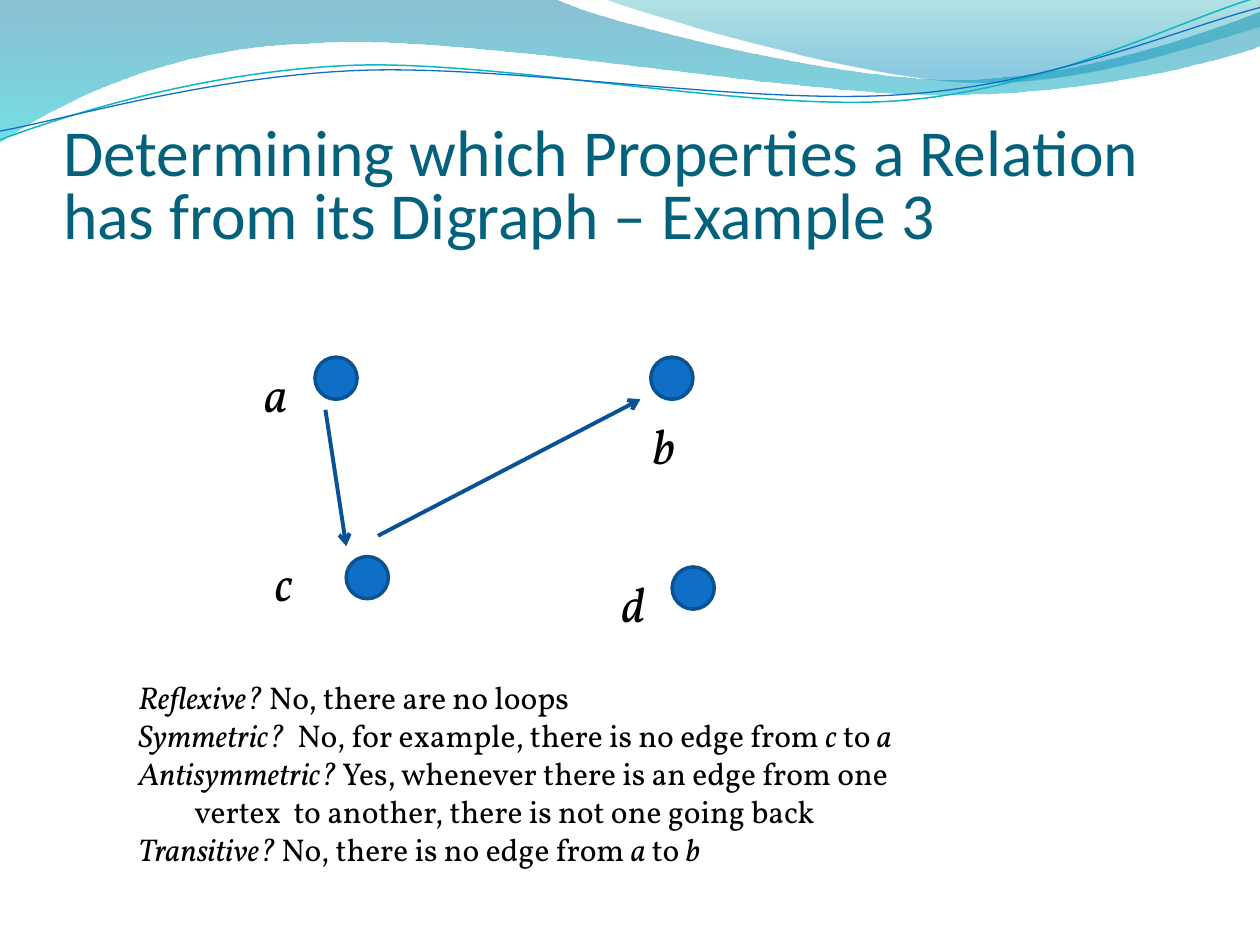
from lxml.etree import SubElement
from pptx import Presentation
from pptx.dml.color import RGBColor
from pptx.enum.shapes import MSO_CONNECTOR as LINK, MSO_SHAPE as SHAPE
from pptx.enum.text import MSO_ANCHOR as ANCHOR, MSO_AUTO_SIZE as FIT, PP_ALIGN as ALIGN
from pptx.oxml.ns import qn
from pptx.util import Cm, Pt

TITLE = RGBColor(0x04, 0x61, 0x7B)
BLACK = RGBColor(0, 0, 0)
BLUE = RGBColor(0x0F, 0x6F, 0xC6)
RIM = RGBColor(0x0B, 0x52, 0x92)
EDGE = RGBColor(0x09, 0x52, 0x95)
TEAL = RGBColor(0x0A, 0xB8, 0xBF)
DEEP = RGBColor(0x00, 0x74, 0xA1)
AQUA = RGBColor(0x00, 0xC6, 0xCF)
MINT = RGBColor(0x00, 0xA1, 0xA9)
SKY = RGBColor(0x00, 0x8B, 0xBF)
FONT = "Vollkorn"

# Wave points, in thousandths of the slide width: a straight step holds
# one point, a curve holds two controls and an end.
BAND = [[(0, 0)], [(440, -1)],
        [(476, 17), (664, 63), (758, 63)], [(853, 63), (958, 26), (1000, 9)],
        [(1001, 36)],
        [(983, 44), (870, 76), (746, 75)], [(622, 75), (382, 28), (257, 34)],
        [(129, 36), (46, 83), (-1, 113)]]
CREST = [[(479, -1)],
         [(509, 11), (682, 62), (769, 65)], [(856, 69), (961, 32), (1000, 21)],
         [(1000, 0)]]
UPPER = [[(0, 111)],
         [(48, 93), (158, 57), (277, 52)], [(395, 47), (593, 89), (713, 80)],
         [(833, 71), (938, 15), (998, -2)]]
LOWER = [[(0, 104)],
         [(47, 96), (164, 61), (283, 56)], [(403, 51), (597, 84), (717, 75)],
         [(836, 67), (941, 21), (1000, 6)]]

# Dot and label corners, in cm from the corner of the graph
NODES = {"a": ((1.27, 0), (0, 0)),
         "b": ((8.04, 0), (7.83, 1.06)),
         "c": ((1.9, 4.02), (0.21, 3.81)),
         "d": ((8.47, 4.23), (7.2, 4.23))}
EDGES = [((1.48, 1.06), (1.9, 3.81)),
         ((2.54, 3.6), (7.83, 0.85))]

# Each line: indent in cm, then runs that alternate italic and upright
ANSWERS = [(0, ["Reflexive?", " No, there are no loops"]),
           (0, ["Symmetric?", "  No, for example, there is no edge from ",
                "c", " to ", "a"]),
           (0, ["Antisymmetric?", " Yes, whenever there is an edge from one"]),
           (1.13, ["", "vertex  to another, there is not one going back"]),
           (0, ["Transitive? ", "No, there is no edge from ",
                "a", " to ", "b"])]


def bend(wave, steps):
    """Join each three-point step of the outline into one curve."""
    outline = next(wave._element.iter(qn("a:path")))
    parts = iter(list(outline))
    for step in steps:
        nodes = [next(parts) for _ in step]
        if len(nodes) == 3:
            curve = SubElement(outline, qn("a:cubicBezTo"))
            nodes[0].addprevious(curve)
            for node in nodes:
                curve.append(node[0])
                outline.remove(node)


def add_wave(slide, box, steps, close):
    left, top, width = box
    dots = [(Cm(left + x * width / 1000), Cm(top + y * width / 1000))
            for step in steps for x, y in step]
    pen = slide.shapes.build_freeform(*dots[0])
    pen.add_line_segments(dots[1:], close=close)
    wave = pen.convert_to_shape()
    bend(wave, steps)
    wave.shadow.inherit = False
    # Decoration belongs to the layout
    slide.slide_layout.shapes._spTree.append(wave._element)
    return wave


def add_waves(slide, box):
    # Translucent bands
    for steps, stops in ((BAND, [(0, DEEP, 45), (1, AQUA, 55)]),
                         (CREST, [(0, MINT, 30), (0.8, SKY, 45)])):
        wave = add_wave(slide, box, steps, True)
        wave.line.fill.background()
        wave.fill.gradient()
        wave.fill.gradient_angle = 270
        for stop, (place, color, _) in zip(wave.fill.gradient_stops, stops):
            stop.position = place
            stop.color.rgb = color
        tints = wave._element.spPr.iter(qn("a:srgbClr"))
        for tint, (_, _, alpha) in zip(list(tints), stops):
            SubElement(tint, qn("a:alpha"), val=str(alpha * 1000))
    # Thin lines
    for steps, color, size in ((UPPER, TEAL, 0.85), (LOWER, BLUE, 0.75)):
        wave = add_wave(slide, box, steps, False)
        wave.fill.background()
        wave.line.color.rgb = color
        wave.line.width = Pt(size)


def set_title(slide, box, text):
    title = slide.shapes.title
    title.left, title.top, title.width, title.height = map(Cm, box)
    frame = title.text_frame
    frame.text = text
    frame.auto_size = FIT.NONE
    frame.vertical_anchor = ANCHOR.BOTTOM
    frame.margin_left = frame.margin_right = frame.margin_bottom = 0
    para = frame.paragraphs[0]
    para.alignment = ALIGN.LEFT
    para.line_spacing = 0.8
    style(para, 37.5, TITLE, "Calibri")


def style(para, size, color=BLACK, name=FONT):
    font = para.font
    font.name, font.size, font.color.rgb = name, Pt(size), color


def add_text(slide, box):
    frame = slide.shapes.add_textbox(*map(Cm, box)).text_frame
    frame.word_wrap = True
    frame.auto_size = FIT.SHAPE_TO_FIT_TEXT
    return frame


def add_graph(slide, left, top):
    # Arrows
    for (x1, y1), (x2, y2) in EDGES:
        edge = slide.shapes.add_connector(
            LINK.STRAIGHT, Cm(left + x1), Cm(top + y1), Cm(left + x2), Cm(top + y2))
        edge.line.color.rgb = EDGE
        edge.line.width = Pt(2.25)
        SubElement(edge.line._get_or_add_ln(), qn("a:tailEnd"), type="arrow")
        SubElement(edge._element.spPr, qn("a:effectLst"))
    # Dots and their labels
    for name, ((x, y), (tx, ty)) in NODES.items():
        dot = slide.shapes.add_shape(
            SHAPE.OVAL, Cm(left + x), Cm(top + y), Cm(0.85), Cm(0.85))
        dot.shadow.inherit = False
        dot.fill.solid()
        dot.fill.fore_color.rgb = BLUE
        dot.line.color.rgb = RIM
        dot.line.width = Pt(2)
        para = add_text(slide, (left + tx, top + ty, 1.06, 1.45)).paragraphs[0]
        para.text = name
        style(para, 28)
        para.font.italic = True


def add_answers(slide, box):
    frame = add_text(slide, box)
    for i, (indent, parts) in enumerate(ANSWERS):
        para = frame.add_paragraph() if i else frame.paragraphs[0]
        style(para, 18)
        if indent:
            para._p.get_or_add_pPr().set("marL", str(Cm(indent)))
        for k, part in enumerate(parts):
            if part:
                run = para.add_run()
                run.text = part
                run.font.italic = k % 2 == 0


def main():
    deck = Presentation()
    deck.slide_width, deck.slide_height = Cm(25.4), Cm(19.05)
    slide = deck.slides.add_slide(deck.slide_layouts[5])
    add_waves(slide, (0, 0, 25.4))
    set_title(slide, (1.27, 1.91, 22.86, 3.18),
              "Determining which Properties a Relation has from its Digraph – Example 3")
    add_graph(slide, 5.08, 7.2)
    add_answers(slide, (2.54, 13.55, 18.42, 4.11))
    deck.save("out.pptx")


if __name__ == "__main__":
    main()
